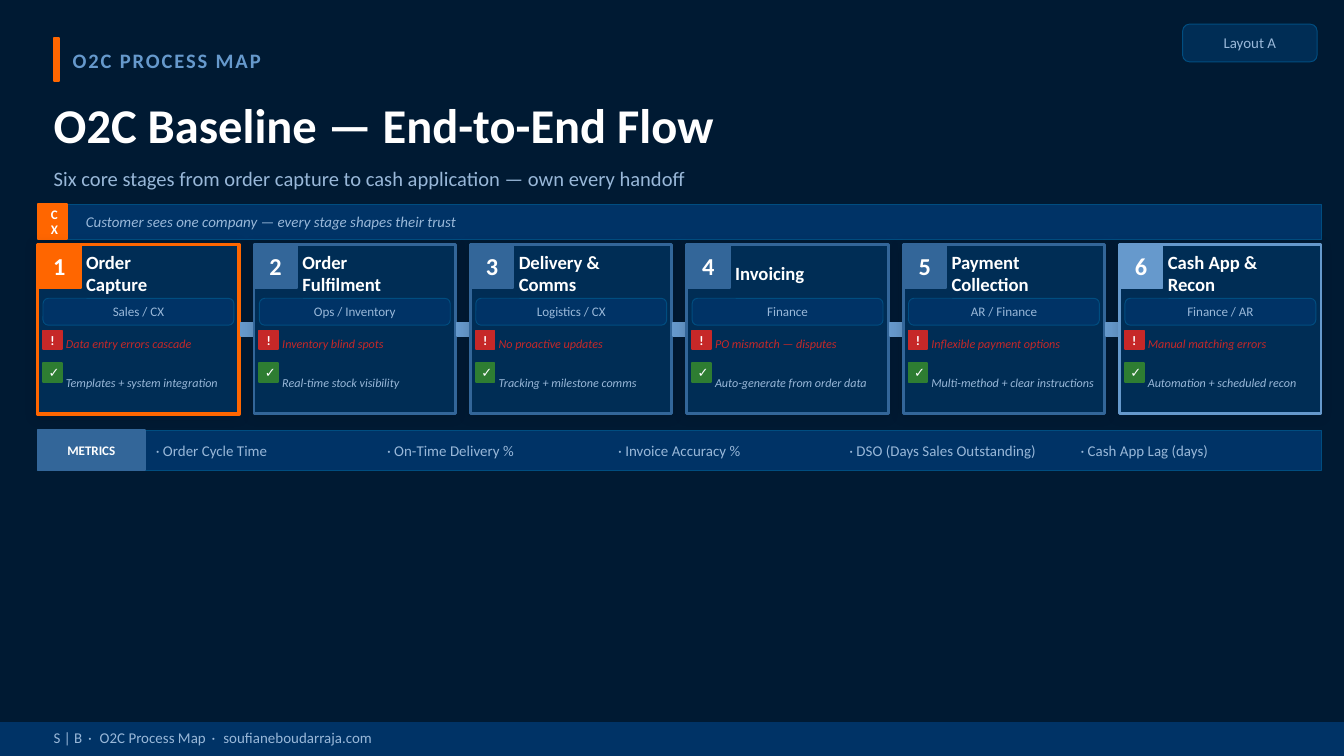
from lxml import etree
from pptx import Presentation
from pptx.dml.color import RGBColor
from pptx.enum.shapes import MSO_SHAPE as Shape
from pptx.enum.text import MSO_ANCHOR as Anchor, PP_ALIGN as Align
from pptx.oxml.ns import qn
from pptx.util import Inches, Pt

COLORS = {
    "background": "001A33", "card": "002D55", "band": "003366", "border": "004D80",
    "steel": "336699", "sky": "6699CC", "muted": "99B8D9", "white": "FFFFFF",
    "orange": "FF6600", "red": "C62828", "green": "2E7D32", "black": "000000",
}
FONT = "Calibri"

deck = Presentation()
deck.slide_width = Inches(10)
deck.slide_height = deck.slide_width * 9 // 16
page = deck.slides.add_slide(deck.slide_layouts[6])
page.background.fill.solid()
page.background.fill.fore_color.rgb = RGBColor.from_string(COLORS["background"])


def add_block(area, fill, line=None, width=1, corner=None):
    kind = Shape.RECTANGLE if corner is None else Shape.ROUNDED_RECTANGLE
    block = page.shapes.add_shape(kind, *map(Inches, area))
    if corner is not None:
        block.adjustments[0] = corner
    block.shadow.inherit = False
    block.fill.solid()
    block.fill.fore_color.rgb = RGBColor.from_string(COLORS[fill])
    block.line.color.rgb = RGBColor.from_string(COLORS[line or fill])
    block.line.width = Pt(width)
    return block


def add_text(area, lines, size, color="muted", bold=False, italic=False,
             centered=False, inset=False):
    box = page.shapes.add_textbox(*map(Inches, area))
    frame = box.text_frame
    frame.word_wrap = True
    frame.vertical_anchor = Anchor.MIDDLE
    if not inset:
        frame.margin_left = frame.margin_right = 0
        frame.margin_top = frame.margin_bottom = 0
    for index, line in enumerate(lines):
        para = frame.add_paragraph() if index else frame.paragraphs[0]
        para.alignment = Align.CENTER if centered else Align.LEFT
        for text, spacing in [(line, 0)] if isinstance(line, str) else line:
            span = para.add_run()
            span.text = text
            span.font.name = FONT
            span.font.size = Pt(size)
            span.font.bold = bold
            span.font.italic = italic
            span.font.color.rgb = RGBColor.from_string(COLORS[color])
            if spacing:
                span.font._element.set("spc", str(spacing))


add_block((0.4, 0.28, 0.04, 0.32), "orange")
add_text((0.54, 0.27, 7, 0.35), [[("O2C PROCESS MAP", 100)]], 11, "sky", bold=True)
layout_tag = (8.8, 0.18, 1, 0.28)
add_block(layout_tag, "card", "border", 0.5, corner=0.18)
add_text(layout_tag, ["Layout A"], 8, centered=True)
add_text((0.4, 0.65, 9.2, 0.55), ["O2C Baseline — End-to-End Flow"], 26, "white", bold=True)
add_text((0.4, 1.18, 9.2, 0.3),
         ["Six core stages from order capture to cash application — own every handoff"], 11)

add_block((0, 5.38, 10, 0.24), "band")
separator = (" · ", 120)
add_text((0.4, 5.39, 9.2, 0.2),
         [[("S | B", 0), separator, ("O2C Process Map", 0), separator,
           ("soufianeboudarraja.com", 0)]], 8)

left, full_width = 0.28, 9.55
add_block((left, 1.52, full_width, 0.26), "band", "border", 0.5)
customer_tag = (left, 1.52, 0.22, 0.26)
add_block(customer_tag, "orange")
add_text(customer_tag, ["CX"], 7, "white", bold=True, centered=True, inset=True)
add_text((0.54, 1.52, 9.25, 0.26),
         ["Customer sees one company — every stage shapes their trust"],
         8, italic=True, inset=True)

stages = [
    (["Order", "Capture"], "Sales / CX", "Data entry errors cascade",
     "Templates + system integration", "orange"),
    (["Order", "Fulfilment"], "Ops / Inventory", "Inventory blind spots",
     "Real-time stock visibility", "steel"),
    (["Delivery &", "Comms"], "Logistics / CX", "No proactive updates",
     "Tracking + milestone comms", "steel"),
    (["Invoicing"], "Finance", "PO mismatch — disputes",
     "Auto-generate from order data", "steel"),
    (["Payment", "Collection"], "AR / Finance", "Inflexible payment options",
     "Multi-method + clear instructions", "steel"),
    (["Cash App &", "Recon"], "Finance / AR", "Manual matching errors",
     "Automation + scheduled recon", "sky"),
]
card_width, pitch, top = 1.5, 1.61, 1.82
for number, (title, owner, risk, remedy, accent) in enumerate(stages, 1):
    x = left + (number - 1) * pitch
    card = add_block((x, top, card_width, 1.26), "card", accent, 2 if number == 1 else 1.5)
    effects = card._element.spPr.find(qn("a:effectLst"))
    shadow = etree.SubElement(effects, qn("a:outerShdw"), blurRad=str(Pt(6)),
                              dist=str(Pt(1)), dir="8100000", algn="bl", rotWithShape="0")
    tint = etree.SubElement(shadow, qn("a:srgbClr"), val=COLORS["black"])
    etree.SubElement(tint, qn("a:alpha"), val="12000")

    badge = (x, top, 0.32, 0.32)
    add_block(badge, accent)
    add_text(badge, [str(number)], 13, "white", bold=True, centered=True, inset=True)
    add_text((x + 0.36, top + 0.02, 1.08, 0.38), title, 10, "white", bold=True)

    owner_pill = (x + 0.04, top + 0.4, 1.42, 0.2)
    add_block(owner_pill, "band", "border", 0.5, corner=0.2)
    add_text(owner_pill, [owner], 7, centered=True, inset=True)

    for symbol, note, fill, note_color, y, height in [
        ("!", risk, "red", "red", 2.46, 0.24),
        ("✓", remedy, "green", "muted", 2.7, 0.34),
    ]:
        icon = (x + 0.04, y, 0.14, 0.14)
        add_block(icon, fill)
        add_text(icon, [symbol], 7, "white", bold=True, centered=True, inset=True)
        add_text((x + 0.21, y - 0.02, 1.25, height), [note], 6.5, note_color, italic=True)

    if number < len(stages):
        add_block((x + card_width + 0.01, 2.4, 0.09, 0.1), "sky")

metrics = ["Order Cycle Time", "On-Time Delivery %", "Invoice Accuracy %",
           "DSO (Days Sales Outstanding)", "Cash App Lag (days)"]
add_block((left, 3.2, full_width, 0.3), "band", "border", 0.5)
metrics_tag = (left, 3.2, 0.8, 0.3)
add_block(metrics_tag, "steel")
add_text(metrics_tag, ["METRICS"], 7, "white", bold=True, centered=True, inset=True)
for index, metric in enumerate(metrics):
    add_text((1.16 + index * 1.72, 3.2, 1.7, 0.3), [f"· {metric}"], 8)

deck.save("out.pptx")
